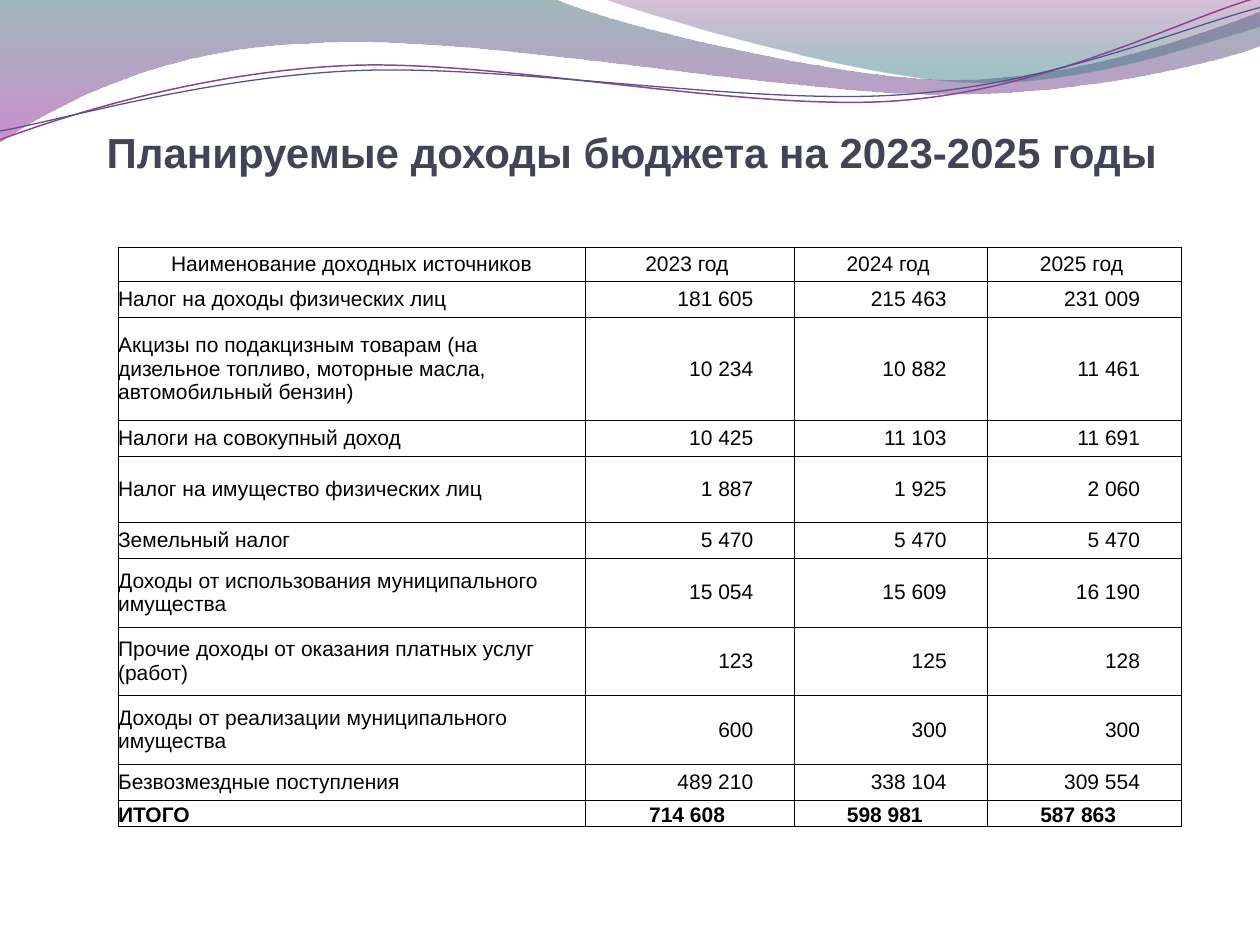
from lxml.etree import SubElement
from pptx import Presentation
from pptx.dml.color import RGBColor
from pptx.enum.text import MSO_ANCHOR, MSO_AUTO_SIZE, PP_ALIGN
from pptx.oxml.ns import qn
from pptx.util import Pt

FONT = "Arial"
LINE_ROTATION = -2.7

# Outlines in points: a pair is a straight line, six numbers are a Bézier curve.
LEFT_WAVE = [
    (0, 0), (316.8, -0.7),
    (342.7, 12.2, 478, 45.4, 545.8, 45.4), (614.2, 45.4, 689.8, 18.7, 720, 6.5),
    (720.7, 25.9),
    (707.8, 31.7, 626.4, 54.7, 537, 54), (447.8, 54, 275, 20.2, 185, 24.5),
    (92.9, 25.9, 33, 59.8, -0.7, 81.4), (0, 0),
]
RIGHT_WAVE = [
    (344.9, -0.7),
    (366.5, 7.9, 491, 44.6, 553.7, 46.8), (616.3, 49.7, 691.9, 23, 720, 15.1),
    (720, 0), (344.9, -0.7),
]
PURPLE_LINE = [
    (-1.4, 62.9),
    (33.8, 51.7, 114.1, 29.4, 199.8, 29.9), (284.9, 30.3, 425.8, 67.3, 512.4, 64.8),
    (599, 62.4, 676.4, 25.7, 720.2, 15.6),
]
BLUE_LINE = [
    (-1.1, 57.9),
    (32.9, 53.7, 118.3, 32.5, 204.1, 33), (290.6, 33.4, 428.9, 63.8, 515.5, 61.4),
    (601.3, 59.6, 678.4, 30.1, 721.4, 21.3),
]

HEADER = ("Наименование доходных источников", "2023 год", "2024 год", "2025 год")
INCOME = [
    ("Налог на доходы физических лиц", "181 605", "215 463", "231 009"),
    ("Акцизы по подакцизным товарам (на дизельное топливо, моторные масла, "
     "автомобильный бензин)", "10 234", "10 882", "11 461"),
    ("Налоги на совокупный доход", "10 425", "11 103", "11 691"),
    ("Налог на имущество физических лиц", "1 887", "1 925", "2 060"),
    ("Земельный налог", "5 470", "5 470", "5 470"),
    ("Доходы от использования муниципального имущества", "15 054", "15 609", "16 190"),
    ("Прочие доходы от оказания платных услуг (работ)", "123", "125", "128"),
    ("Доходы от реализации муниципального имущества", "600", "300", "300"),
    ("Безвозмездные поступления", "489 210", "338 104", "309 554"),
]
TOTAL = ("ИТОГО", "714 608", "598 981", "587 863")
COLUMN_WIDTHS = (267, 119.5, 110.5, 110.5)
ROW_HEIGHTS = (19.5, 20.5, 59, 20.5, 37.5, 20.5, 39.5, 39, 39.5, 20.5, 15)
YEAR_INDENT = 3.4
NUMBER_INDENT = 23.5
TOTAL_INDENTS = (0, 36.5, 30, 30)


def color(value):
    return RGBColor.from_string(value)


def write(frame, text, size=12, bold=False, text_color="000000", align=PP_ALIGN.LEFT):
    paragraph = frame.paragraphs[0]
    paragraph.alignment = align
    run = paragraph.add_run()
    run.text = text
    run.font.name = FONT
    run.font.size = Pt(size)
    run.font.bold = bold
    run.font.color.rgb = color(text_color)


def add_outline(slide, left, top, outline, close):
    """Build the outline from all its points, then join each three into a curve."""
    points = [
        (Pt(left + segment[index]), Pt(top + segment[index + 1]))
        for segment in outline for index in range(0, len(segment), 2)]
    builder = slide.shapes.build_freeform(*points[0])
    builder.add_line_segments(points[1:], close=close)
    shape = builder.convert_to_shape()
    shape.shadow.inherit = False
    steps = iter(list(shape.element.iter(qn("a:lnTo"))))
    for segment in outline[1:]:
        first = next(steps)
        if len(segment) == 6:
            first.tag = qn("a:cubicBezTo")
            for step in (next(steps), next(steps)):
                first.append(step[0])
                step.getparent().remove(step)
    return shape


def add_wave(slide, left, top, outline, stops):
    """Stops are (position, colour, opacity in percent), from top to bottom."""
    shape = add_outline(slide, left, top, outline, close=True)
    shape.line.fill.background()
    shape.fill.gradient()
    shape.fill.gradient_angle = 270
    for stop, (position, value, _) in zip(shape.fill.gradient_stops, stops):
        stop.position = position
        stop.color.rgb = color(value)
    for element, (_, _, opacity) in zip(shape.element.iter(qn("a:srgbClr")), stops):
        SubElement(element, qn("a:alpha"), val=str(opacity * 1000))


def add_wave_line(slide, left, top, outline, value, width):
    shape = add_outline(slide, left, top, outline, close=False)
    shape.rotation = LINE_ROTATION
    shape.fill.background()
    shape.line.color.rgb = color(value)
    shape.line.width = Pt(width)


def add_waves(slide, left, top):
    add_wave(slide, left, top, LEFT_WAVE, [(0, "2D6368", 45), (1, "A530A9", 55)])
    add_wave(slide, left, top, RIGHT_WAVE, [(0, "7F2F82", 30), (0.8, "2F7B82", 45)])
    add_wave_line(slide, left, top, PURPLE_LINE, "8D4490", 0.85)
    add_wave_line(slide, left, top, BLUE_LINE, "53548A", 0.75)


def place_title(slide, left, top, width, height, text):
    title = slide.shapes.title
    title.left, title.top = Pt(left), Pt(top)
    title.width, title.height = Pt(width), Pt(height)
    frame = title.text_frame
    frame.auto_size = MSO_AUTO_SIZE.NONE
    frame.word_wrap = True
    frame.vertical_anchor = MSO_ANCHOR.BOTTOM
    frame.margin_left = frame.margin_right = frame.margin_bottom = 0
    frame.margin_top = Pt(3.6)
    write(frame, text, size=24, bold=True, text_color="424456", align=PP_ALIGN.CENTER)
    title.element.getparent().append(title.element)  # in front of the waves


def format_cell(cell, anchor=MSO_ANCHOR.MIDDLE, left_indent=0, right_indent=0):
    cell.margin_top = cell.margin_bottom = 0
    cell.margin_left, cell.margin_right = Pt(left_indent), Pt(right_indent)
    cell.vertical_anchor = anchor
    properties = cell._tc.get_or_add_tcPr()
    for side in ("lnL", "lnR", "lnT", "lnB"):
        border = SubElement(properties, qn(f"a:{side}"), w=str(Pt(0.5)))
        fill = SubElement(border, qn("a:solidFill"))
        SubElement(fill, qn("a:srgbClr"), val="000000")
    cell.fill.background()


def add_income_table(slide, left, top):
    rows = [HEADER, *INCOME, TOTAL]
    table = slide.shapes.add_table(
        len(rows), len(HEADER), Pt(left), Pt(top),
        Pt(sum(COLUMN_WIDTHS)), Pt(sum(ROW_HEIGHTS))).table
    table.first_row = table.horz_banding = False
    for column, width in zip(table.columns, COLUMN_WIDTHS):
        column.width = Pt(width)
    for row, height in zip(table.rows, ROW_HEIGHTS):
        row.height = Pt(height)
    for row_index, texts in enumerate(rows):
        for column_index, text in enumerate(texts):
            cell = table.cell(row_index, column_index)
            align = PP_ALIGN.LEFT
            if texts is TOTAL:
                format_cell(cell, MSO_ANCHOR.BOTTOM, left_indent=TOTAL_INDENTS[column_index])
            elif texts is HEADER:
                format_cell(cell, right_indent=YEAR_INDENT if column_index else 0)
                align = PP_ALIGN.CENTER
            elif column_index:
                format_cell(cell, right_indent=NUMBER_INDENT)
                align = PP_ALIGN.RIGHT
            else:
                format_cell(cell)
            write(cell.text_frame, text, bold=texts is TOTAL, align=align)


def main():
    presentation = Presentation()
    presentation.slide_width, presentation.slide_height = Pt(720), Pt(540)
    slide = presentation.slides.add_slide(presentation.slide_layouts.get_by_name("Title Only"))
    add_waves(slide, 0, 0)
    place_title(slide, 34, 50.5, 654, 50.5, "Планируемые доходы бюджета на 2023-2025 годы")
    add_income_table(slide, 67.5, 141.4)
    presentation.save("out.pptx")


if __name__ == "__main__":
    main()
